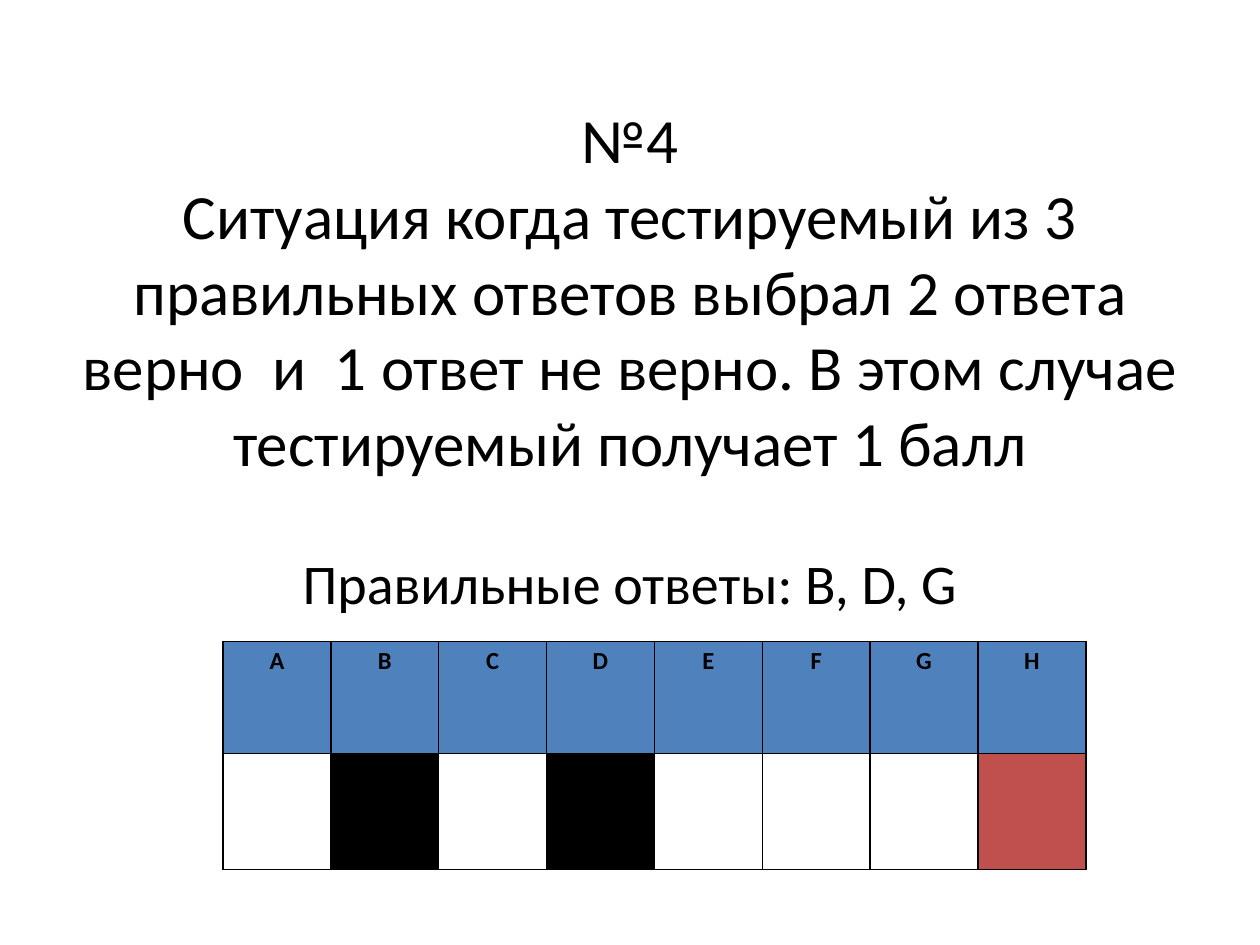
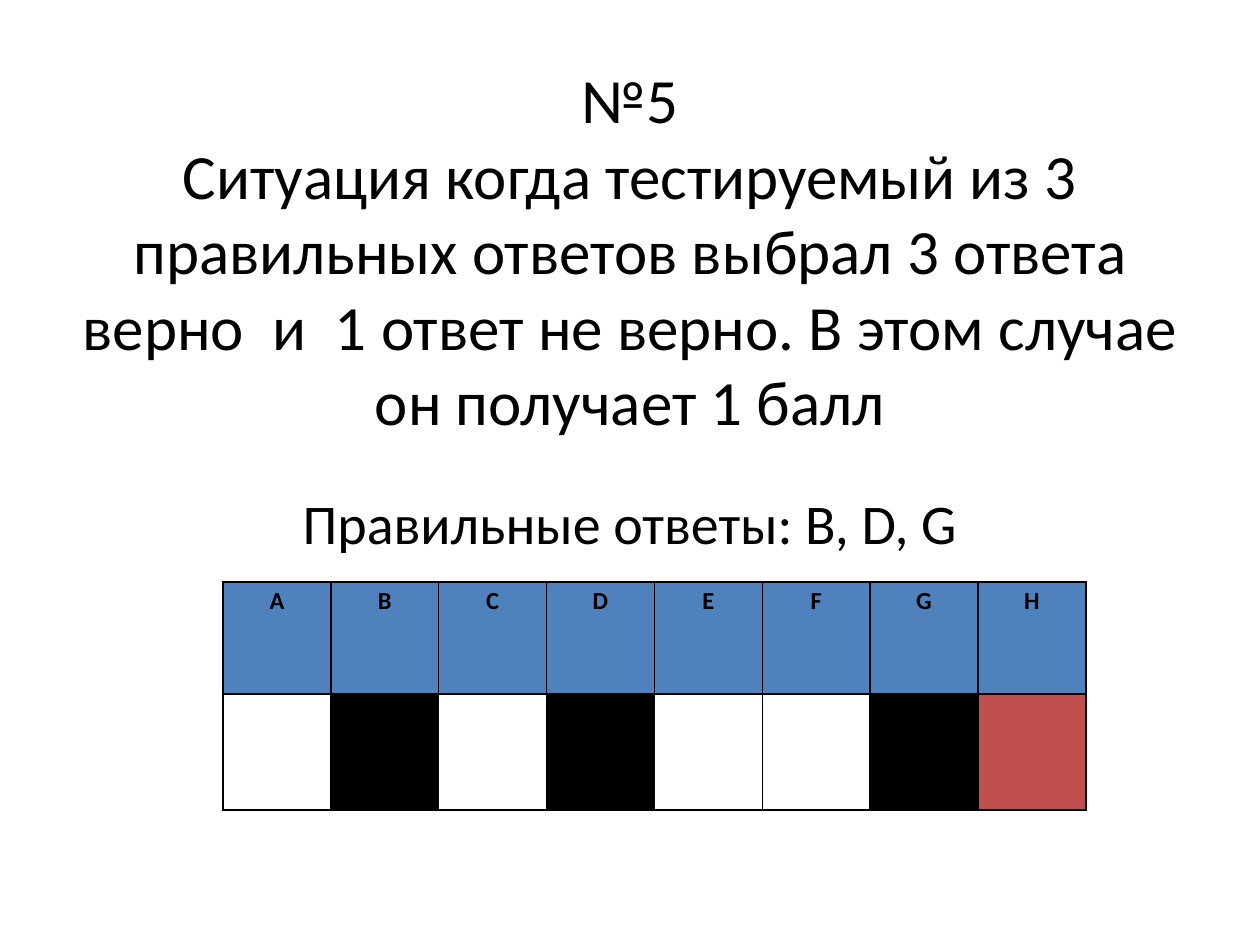
from dataclasses import dataclass

from lxml import etree
from pptx import Presentation
from pptx.dml.color import RGBColor
from pptx.enum.text import MSO_ANCHOR, PP_ALIGN
from pptx.oxml.ns import qn
from pptx.slide import Slide
from pptx.table import _Cell
from pptx.text.text import TextFrame
from pptx.util import Inches, Pt

CENTER = PP_ALIGN.CENTER
TOP = MSO_ANCHOR.TOP
MIDDLE = MSO_ANCHOR.MIDDLE
BLANK_LAYOUT = 6


@dataclass(frozen=True)
class Theme:
    font: str = "Calibri"
    title_size: int = 36
    answer_size: int = 32
    letter_size: int = 14
    border_width: int = 1
    text: str = "000000"
    header: str = "4F81BD"
    unmarked: str = "FFFFFF"
    correct: str = "000000"
    wrong: str = "C0504D"


@dataclass(frozen=True)
class Box:
    left: float
    top: float
    width: float
    height: float

    def lengths(self) -> tuple[int, ...]:
        return tuple(map(Inches, (self.left, self.top, self.width, self.height)))


@dataclass(frozen=True)
class Situation:
    title: str
    title_box: Box
    answer_box: Box
    correct_marks: str
    wrong_marks: str


THEME = Theme()
LETTERS = "ABCDEFGH"
ANSWER_TEXT = "Правильные ответы: B, D, G"
TABLE_LEFT, TABLE_WIDTH = 1.77, 6.85
TABLE_OFFSET = 0.79
ROW_HEIGHTS = (0.89, 0.92)

SITUATIONS = (
    Situation(
        "№4\vСитуация когда тестируемый из 3 правильных ответов выбрал 2 ответа "
        "верно  и  1 ответ не верно. В этом случае тестируемый получает 1 балл",
        Box(0.5, 0.29, 9, 4.02), Box(0.95, 4.3, 8.1, 2.91), "BD", "H",
    ),
    Situation(
        "№5\vСитуация когда тестируемый из 3 правильных ответов выбрал 3 ответа "
        "верно  и  1 ответ не верно. В этом случае он получает 1 балл",
        Box(0.5, 0.37, 9, 3.22), Box(0.95, 3.83, 8.1, 2.87), "BDG", "H",
    ),
)


def write_text(text_frame: TextFrame, text: str, size: int, bold: bool = False) -> None:
    paragraph = text_frame.paragraphs[0]
    paragraph.text = text
    paragraph.alignment = CENTER
    for run in paragraph.runs:
        run.font.name = THEME.font
        run.font.size = Pt(size)
        run.font.bold = bold
        run.font.color.rgb = RGBColor.from_string(THEME.text)


def add_text(slide: Slide, box: Box, text: str, size: int, anchor: MSO_ANCHOR) -> None:
    text_frame = slide.shapes.add_textbox(*box.lengths()).text_frame
    text_frame.word_wrap = True
    text_frame.vertical_anchor = anchor
    write_text(text_frame, text, size)


def style_cell(cell: _Cell, color: str) -> None:
    properties = cell._tc.get_or_add_tcPr()
    for side in ("a:lnL", "a:lnR", "a:lnT", "a:lnB"):
        line = etree.SubElement(properties, qn(side), w=str(Pt(THEME.border_width)))
        fill = etree.SubElement(line, qn("a:solidFill"))
        etree.SubElement(fill, qn("a:srgbClr"), val=THEME.text)
    cell.fill.solid()
    cell.fill.fore_color.rgb = RGBColor.from_string(color)
    cell.margin_left = cell.margin_right = Inches(0.07)
    cell.margin_top = cell.margin_bottom = 0


def mark_color(letter: str, situation: Situation) -> str:
    if letter in situation.correct_marks:
        return THEME.correct
    return THEME.wrong if letter in situation.wrong_marks else THEME.unmarked


def add_answer_table(slide: Slide, situation: Situation) -> None:
    box = Box(TABLE_LEFT, situation.answer_box.top + TABLE_OFFSET, TABLE_WIDTH, sum(ROW_HEIGHTS))
    table = slide.shapes.add_table(len(ROW_HEIGHTS), len(LETTERS), *box.lengths()).table
    for row, height in zip(table.rows, ROW_HEIGHTS):
        row.height = Inches(height)
    for column, letter in enumerate(LETTERS):
        header = table.cell(0, column)
        style_cell(header, THEME.header)
        write_text(header.text_frame, letter, THEME.letter_size, bold=True)
        header.text_frame.paragraphs[0].line_spacing = 1.15
        style_cell(table.cell(1, column), mark_color(letter, situation))


def add_situation(presentation: Presentation, situation: Situation) -> None:
    slide = presentation.slides.add_slide(presentation.slide_layouts[BLANK_LAYOUT])
    add_text(slide, situation.title_box, situation.title, THEME.title_size, MIDDLE)
    add_text(slide, situation.answer_box, ANSWER_TEXT, THEME.answer_size, TOP)
    add_answer_table(slide, situation)


def main() -> None:
    presentation = Presentation()
    presentation.slide_width = Inches(10)
    presentation.slide_height = Inches(7.5)
    for situation in SITUATIONS:
        add_situation(presentation, situation)
    presentation.save("out.pptx")


if __name__ == "__main__":
    main()
